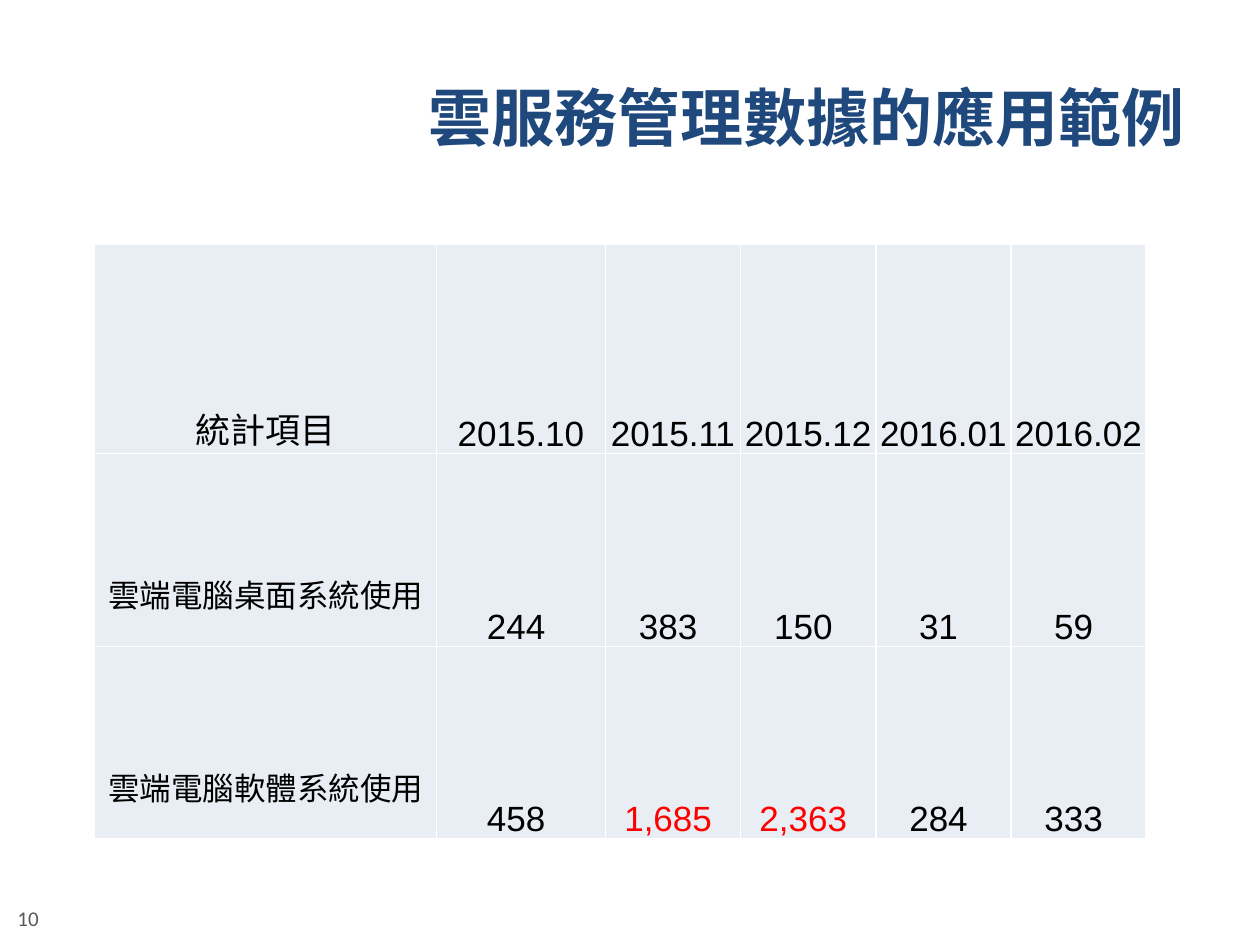
"""Build the slide of cloud service usage figures by month."""
from lxml import etree
from pptx import Presentation
from pptx.dml.color import RGBColor
from pptx.enum import text
from pptx.oxml import ns
from pptx.util import Pt

TITLE = "雲服務管理數據的應用範例"
PAGE_NUMBER = "10"
ROWS = [
    ["統計項目", "2015.10", "2015.11", "2015.12", "2016.01", "2016.02"],
    ["雲端電腦桌面系統使用", "244 ", "383 ", "150 ", "31 ", "59 "],
    ["雲端電腦軟體系統使用", "458 ", "1,685 ", "2,363 ", "284 ", "333 "],
]
HIGHLIGHTS = {(2, 2), (2, 3)}
COLUMN_WIDTHS = [195.5, 96.5] + [77.25] * 4
ROW_HEIGHTS = [119.5, 110.2, 110.2]
LABEL_DROP = 67
COLORS = {
    "title": "1F497D", "number": "595959", "body": "000000",
    "highlight": "FF0000", "cell": "E9EDF4", "border": "FFFFFF",
}


def color(name):
    """Return the named colour."""
    return RGBColor.from_string(COLORS[name])


def write(frame, words, size, font, tint, align, anchor, bold=False):
    """Put one formatted run into a text frame or cell frame."""
    frame.word_wrap = True
    frame.vertical_anchor = anchor
    para = frame.paragraphs[0]
    para.alignment = align
    span = para.add_run()
    span.text = words
    span.font.size, span.font.name, span.font.bold = Pt(size), font, bold
    span.font.color.rgb = color(tint)


def add_borders(cell):
    """Draw a thin line on every side of a cell, ahead of its fill."""
    properties = cell._tc.get_or_add_tcPr()
    for index, side in enumerate(("lnL", "lnR", "lnT", "lnB")):
        line = etree.Element(ns.qn(f"a:{side}"), w=str(Pt(1)))
        fill = etree.SubElement(line, ns.qn("a:solidFill"))
        etree.SubElement(fill, ns.qn("a:srgbClr"), val=COLORS["border"])
        properties.insert(index, line)


def fill_table(table):
    """Size the table and write its cells."""
    for column, width in zip(table.columns, COLUMN_WIDTHS):
        column.width = Pt(width)
    for row, height in zip(table.rows, ROW_HEIGHTS):
        row.height = Pt(height)
    for r, values in enumerate(ROWS):
        for c, value in enumerate(values):
            cell = table.cell(r, c)
            is_label = r > 0 and c == 0
            cell.margin_left = cell.margin_right = Pt(0.7)
            cell.margin_top = Pt(LABEL_DROP if is_label else 0.7)
            cell.margin_bottom = Pt(0)
            anchor = text.MSO_ANCHOR.TOP if is_label else text.MSO_ANCHOR.BOTTOM
            write(cell.text_frame, value, 18 if is_label else 20, "Arial",
                  "highlight" if (r, c) in HIGHLIGHTS else "body",
                  text.PP_ALIGN.CENTER, anchor)
            cell.vertical_anchor = anchor
            cell.fill.solid()
            cell.fill.fore_color.rgb = color("cell")
            add_borders(cell)


def main():
    """Assemble and save the deck."""
    deck = Presentation()
    deck.slide_width, deck.slide_height = Pt(720), Pt(540)
    page = deck.slides.add_slide(deck.slide_layouts[5])

    title = page.shapes.title
    title.left, title.top, title.width, title.height = Pt(36), Pt(21.6), Pt(648), Pt(90)
    write(title.text_frame, TITLE, 36, "Calibri", "title",
          text.PP_ALIGN.RIGHT, text.MSO_ANCHOR.MIDDLE, bold=True)

    number = page.shapes.add_textbox(Pt(2.9), Pt(510.5), Pt(168), Pt(28.8))
    write(number.text_frame, PAGE_NUMBER, 12, "Calibri", "number",
          text.PP_ALIGN.LEFT, text.MSO_ANCHOR.MIDDLE)

    frame = page.shapes.add_table(len(ROWS), len(COLUMN_WIDTHS), Pt(54), Pt(139.7),
                                  Pt(sum(COLUMN_WIDTHS)), Pt(sum(ROW_HEIGHTS)))
    fill_table(frame.table)
    deck.save("out.pptx")


if __name__ == "__main__":
    main()
